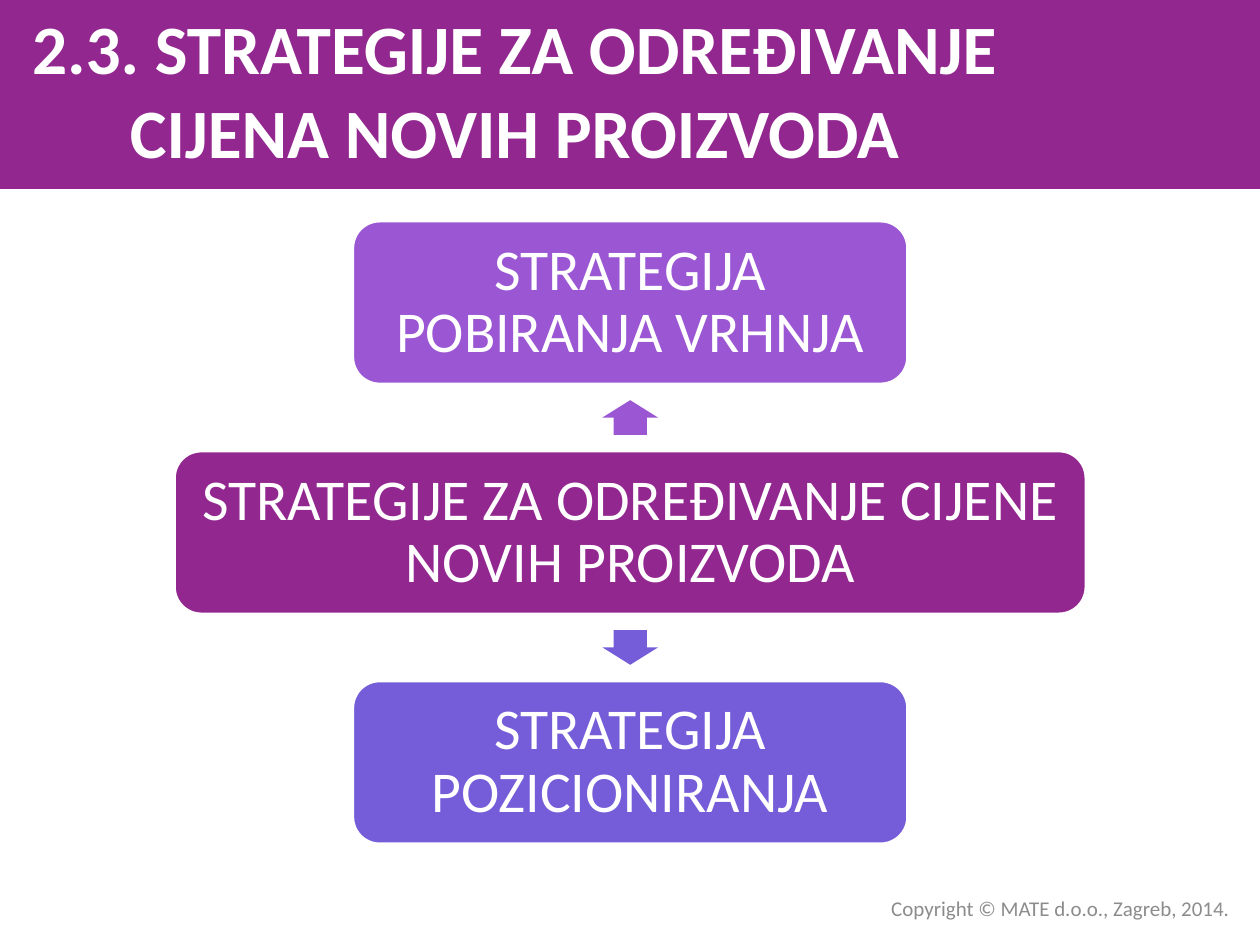
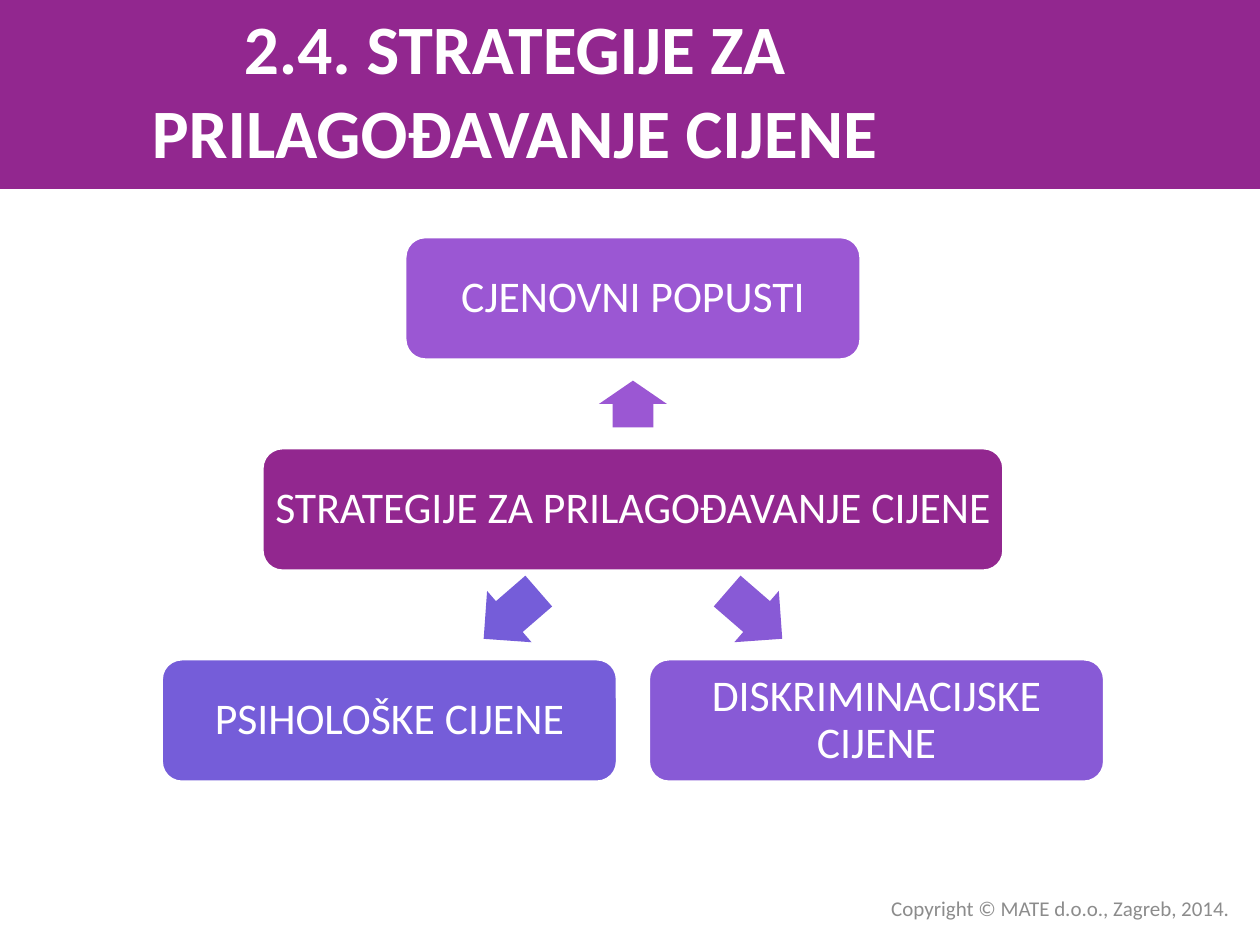
import math
from dataclasses import dataclass

from pptx import Presentation
from pptx import util as u
from pptx.dml.color import RGBColor
from pptx.enum import shapes, text

FONT = "Calibri"
COLOURS = {
    "plum": "92278F",
    "orchid": "9B57D3",
    "violet": "885AD6",
    "indigo": "755DD9",
    "white": "FFFFFF",
    "grey": "8C8C8C",
}
COPYRIGHT = "Copyright © MATE d.o.o., Zagreb, 2014."


@dataclass
class Box:
    """A rectangle in centimetres."""
    left: float
    top: float
    width: float
    height: float

    @classmethod
    def around(cls, x, y, width, height):
        return cls(x - width / 2, y - height / 2, width, height)

    @property
    def centre(self):
        return self.left + self.width / 2, self.top + self.height / 2

    def lengths(self):
        return [u.Cm(n) for n in (self.left, self.top, self.width, self.height)]


@dataclass
class Spoke:
    """A node at one side of the hub: x and y are -1, 0 or 1."""
    label: str
    colour: str
    x: int
    y: int
    arrow_length: float


SLIDE = Box(0, 0, 25.4, 19.05)
BAND = Box(0, 0, 25.4, 3.81)
TITLE = Box(0, 0.2, 20.75, 3.18)
FOOTER = Box(11.91, 17.93, 13.13, 0.76)


def rgb(name):
    return RGBColor.from_string(COLOURS[name])


def write(frame, words, size, colour, align, bold=False, spacing=1.0):
    frame.word_wrap = True
    frame.auto_size = text.MSO_AUTO_SIZE.NONE
    frame.vertical_anchor = text.MSO_ANCHOR.MIDDLE
    para = frame.paragraphs[0]
    para.alignment = align
    para.line_spacing = spacing
    span = para.add_run()
    span.text = words
    span.font.name = FONT
    span.font.size = u.Pt(size)
    span.font.bold = bold
    span.font.color.rgb = rgb(colour)


def add_filled(page, kind, box, colour):
    shape = page.shapes.add_shape(kind, *box.lengths())
    shape.shadow.inherit = False
    shape.fill.solid()
    shape.fill.fore_color.rgb = rgb(colour)
    shape.line.fill.background()
    return shape


def add_node(page, box, label, colour, size, inset):
    node = add_filled(page, shapes.MSO_SHAPE.ROUNDED_RECTANGLE, box, colour)
    node.line.color.rgb = rgb("white")
    node.line.width = u.Pt(2)
    frame = node.text_frame
    frame.margin_left = frame.margin_right = u.Cm(inset)
    frame.margin_top = frame.margin_bottom = u.Cm(inset)
    write(frame, label, size, "white", text.PP_ALIGN.CENTER, spacing=0.9)


def add_hub_diagram(page, box, hub, spokes, hub_width, spoke_width,
                    node_height, arrow_width, size, inset):
    """Centre the hub in the box, push spokes to its edges, arrows halfway."""
    x, y = box.centre
    add_node(page, Box.around(x, y, hub_width, node_height),
             hub, "plum", size, inset)
    for spoke in spokes:
        dx = spoke.x * (box.width - spoke_width) / 2
        dy = spoke.y * (box.height - node_height) / 2
        arrow_box = Box.around(x + dx / 2, y + dy / 2,
                               spoke.arrow_length, arrow_width)
        arrow = add_filled(page, shapes.MSO_SHAPE.RIGHT_ARROW,
                           arrow_box, spoke.colour)
        arrow.adjustments[0] = 0.6
        arrow.adjustments[1] = 0.5
        arrow.rotation = math.degrees(math.atan2(dy, dx))
        add_node(page, Box.around(x + dx, y + dy, spoke_width, node_height),
                 spoke.label, spoke.colour, size, inset)


def add_footer(page, box):
    footer = page.shapes.add_textbox(*box.lengths())
    write(footer.text_frame, COPYRIGHT, 12, "grey", text.PP_ALIGN.RIGHT)


def add_page(deck, heading):
    page = deck.slides.add_slide(deck.slide_layouts[5])
    title = page.shapes.title
    title.left, title.top, title.width, title.height = TITLE.lengths()
    write(title.text_frame, heading, 39.6, "white",
          text.PP_ALIGN.CENTER, bold=True)
    add_footer(page, FOOTER)
    return page


def move_band_to_layout(page):
    """Draw the title band and hand it to the layout that all pages share."""
    band = add_filled(page, shapes.MSO_SHAPE.RECTANGLE, BAND, "plum")
    page.slide_layout.shapes.element.insert(2, band.element)


def main():
    deck = Presentation()
    deck.slide_width, deck.slide_height = SLIDE.lengths()[2:]

    new_products = add_page(
        deck, "2.3. STRATEGIJE ZA ODREĐIVANJE CIJENA NOVIH PROIZVODA")
    move_band_to_layout(new_products)
    add_hub_diagram(
        new_products, Box(3.51, 4.45, 18.39, 12.57),
        "STRATEGIJE ZA ODREĐIVANJE CIJENE NOVIH PROIZVODA",
        [Spoke("STRATEGIJA POBIRANJA VRHNJA", "orchid", 0, -1, 0.7),
         Spoke("STRATEGIJA POZICIONIRANJA", "indigo", 0, 1, 0.7)],
        hub_width=18.39, spoke_width=11.2, node_height=3.3,
        arrow_width=1.12, size=33, inset=0.13)

    adjustment = add_page(deck, "2.4. STRATEGIJE ZA PRILAGOĐAVANJE CIJENE")
    add_hub_diagram(
        adjustment, Box(3.25, 4.77, 19.02, 11),
        "STRATEGIJE ZA PRILAGOĐAVANJE CIJENE",
        [Spoke("CJENOVNI POPUSTI", "orchid", 0, -1, 0.94),
         Spoke("DISKRIMINACIJSKE CIJENE", "violet", 1, 1, 1.47),
         Spoke("PSIHOLOŠKE CIJENE", "indigo", -1, 1, 1.47)],
        hub_width=14.96, spoke_width=9.2, node_height=2.49,
        arrow_width=1.37, size=25, inset=0.08)

    deck.save("out.pptx")


if __name__ == "__main__":
    main()
